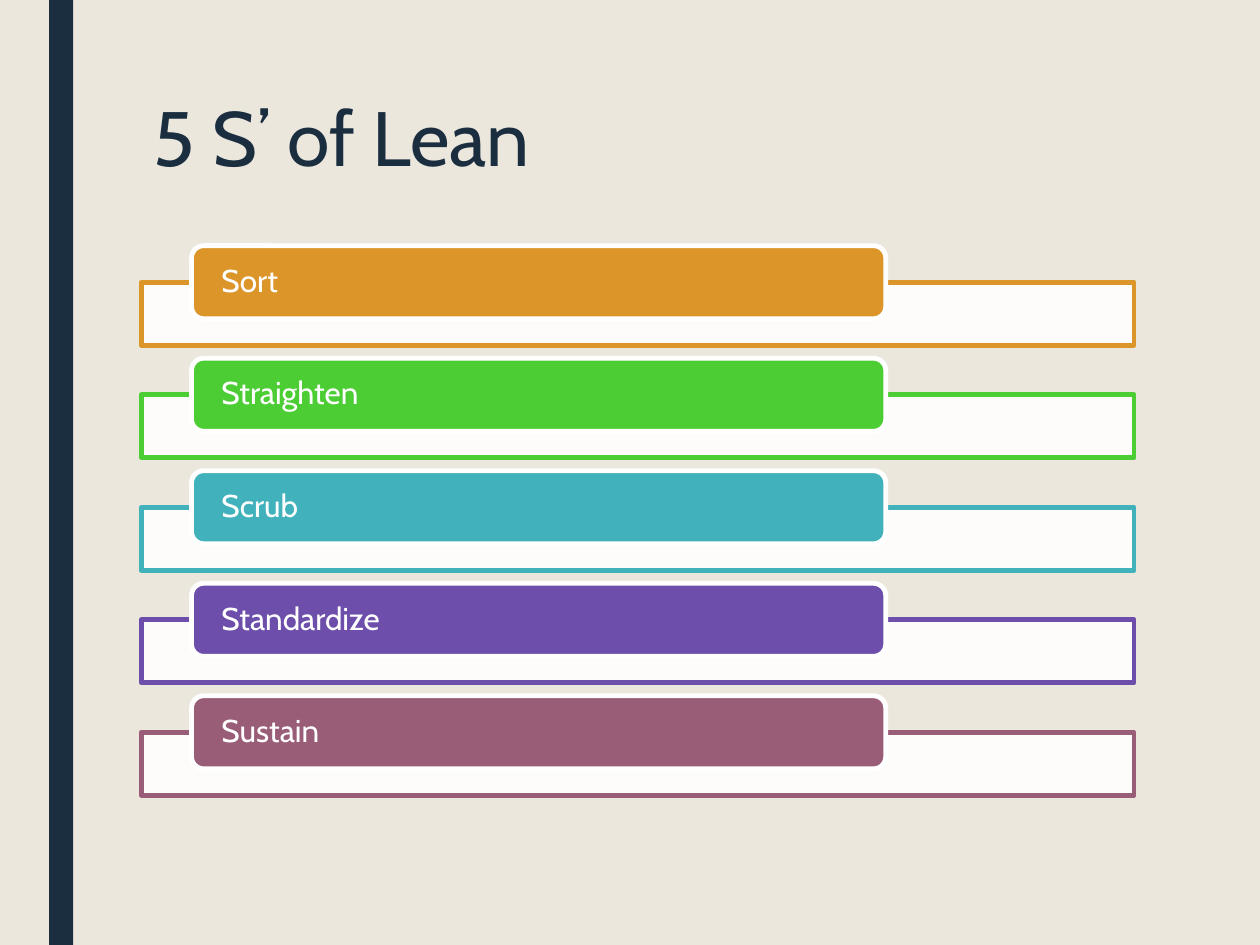
from lxml.etree import SubElement
from pptx import Presentation
from pptx.dml.color import RGBColor
from pptx.enum.shapes import MSO_SHAPE
from pptx.enum.text import MSO_ANCHOR, PP_ALIGN
from pptx.oxml.ns import qn
from pptx.util import Inches, Pt

NAVY, CREAM, WHITE = "1A2E40", "EBE7DD", "FFFFFF"
STEPS = [
    ("Sort", "DC9528"),
    ("Straighten", "4CCD34"),
    ("Scrub", "41B2BC"),
    ("Standardize", "6D4FAB"),
    ("Sustain", "9A5D78"),
]
LEFT, WIDTH = 1.12, 7.88
FIRST_TOP, PITCH = 1.95, 0.893


def paint(fill, color):
    """Give a fill one solid colour."""
    fill.solid()
    fill.fore_color.rgb = RGBColor.from_string(color)


def add_block(slide, kind, box, color, outline=None):
    """Add a filled preset shape, outlined if a colour is given."""
    block = slide.shapes.add_shape(kind, *map(Inches, box))
    block.shadow.inherit = False
    paint(block.fill, color)
    if outline:
        paint(block.line.fill, outline)
        block.line.width = Pt(2.75)
    else:
        block.line.fill.background()
    return block


def write(frame, text, size, color, spacing):
    """Write one left-aligned paragraph into a text frame."""
    frame.word_wrap = True
    paragraph = frame.paragraphs[0]
    paragraph.text = text
    paragraph.alignment = PP_ALIGN.LEFT
    paragraph.line_spacing = spacing
    paragraph.font.name = "Cabin"
    paragraph.font.size = Pt(size)
    paragraph.font.color.rgb = RGBColor.from_string(color)


def add_title(slide, text):
    """Add the slide heading."""
    title = slide.shapes.add_textbox(*map(Inches, (LEFT, 0.75, WIDTH, 1.08)))
    write(title.text_frame, text, 44, NAVY, 0.89)


def add_step(slide, top, name, color):
    """Add a translucent panel with its step label overlapping the top edge."""
    panel = add_block(slide, MSO_SHAPE.RECTANGLE, (LEFT, top + 0.29, WIDTH, 0.5), WHITE, color)
    panel_color = panel.fill._xPr.find(qn("a:solidFill"))[0]
    SubElement(panel_color, qn("a:alpha"), val="90000")
    label = add_block(slide, MSO_SHAPE.ROUNDED_RECTANGLE, (1.52, top, 5.51, 0.58), color, WHITE)
    frame = label.text_frame
    frame.margin_left = frame.margin_right = Inches(0.21)
    frame.margin_top = frame.margin_bottom = 0
    frame.vertical_anchor = MSO_ANCHOR.MIDDLE
    write(frame, name, 18, WHITE, 0.9)


def main():
    """Build and save the slide."""
    deck = Presentation()
    deck.slide_width, deck.slide_height = Inches(10), Inches(7.5)
    slide = deck.slides.add_slide(deck.slide_layouts[6])
    paint(slide.background.fill, CREAM)
    add_block(slide, MSO_SHAPE.RECTANGLE, (0.39, 0, 0.19, 7.5), NAVY)
    add_title(slide, "5 S’ of Lean")
    for index, (name, color) in enumerate(STEPS):
        add_step(slide, FIRST_TOP + index * PITCH, name, color)
    deck.save("out.pptx")


if __name__ == "__main__":
    main()
